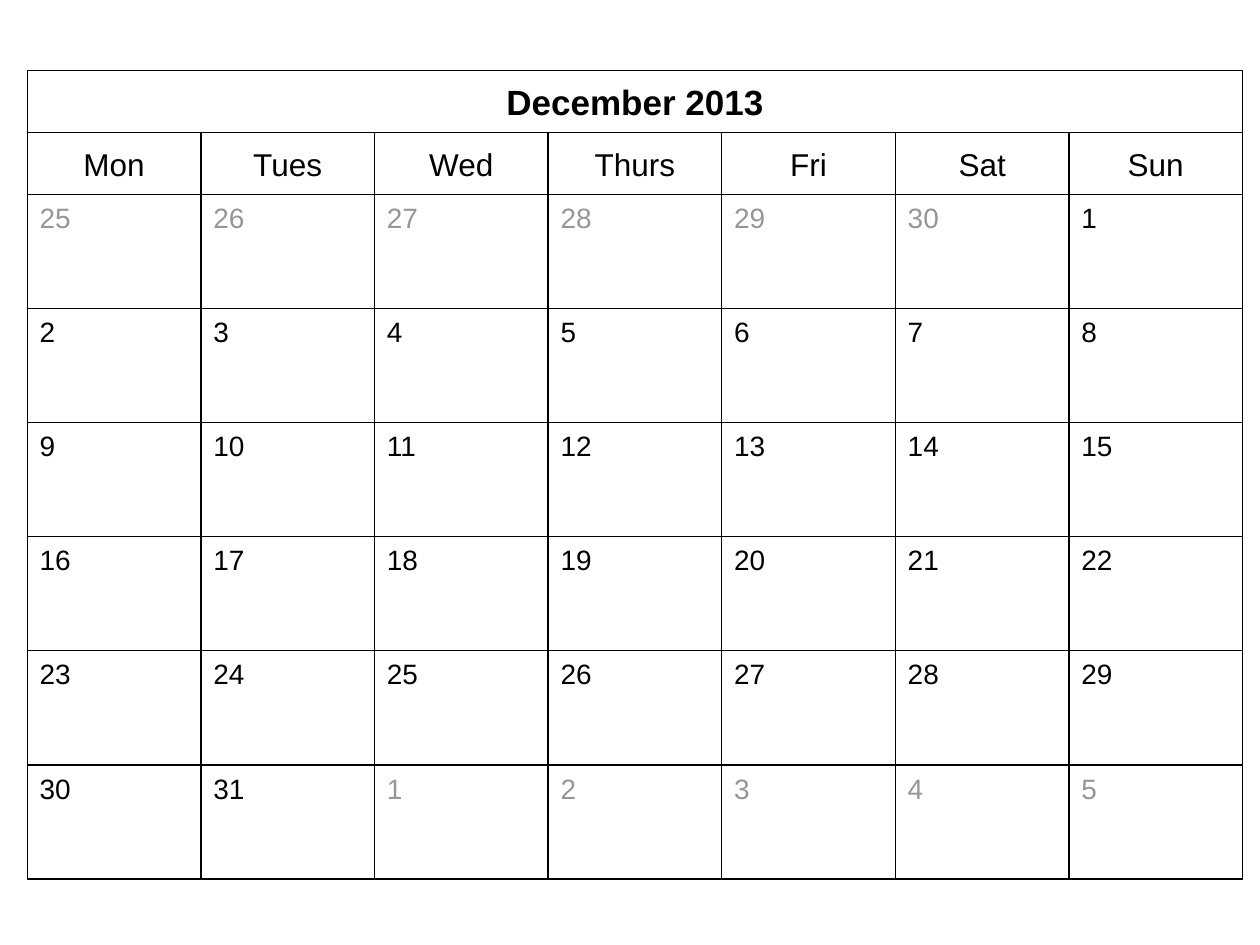
from dataclasses import dataclass
from itertools import chain

from pptx import Presentation
from pptx.dml.color import RGBColor
from pptx.enum.shapes import MSO_SHAPE
from pptx.enum.text import MSO_ANCHOR, MSO_AUTO_SIZE, PP_ALIGN
from pptx.util import Cm, Pt

RECT = MSO_SHAPE.RECTANGLE
TOP, MIDDLE = MSO_ANCHOR.TOP, MSO_ANCHOR.MIDDLE
LEFT, CENTER = PP_ALIGN.LEFT, PP_ALIGN.CENTER
FIXED = MSO_AUTO_SIZE.NONE
TITLE_ONLY = 5


@dataclass(frozen=True)
class Theme:
    """Colours, font and type sizes of the calendar."""
    ink: RGBColor = RGBColor(0, 0, 0)
    dim: RGBColor = RGBColor(0x96, 0x96, 0x96)
    paper: RGBColor = RGBColor(255, 255, 255)
    font: str = "Arial"
    month: Pt = Pt(20)
    name: Pt = Pt(18)
    date: Pt = Pt(16)
    line: Pt = Pt(0.75)


THEME = Theme()
GRID_X, GRID_Y = Cm(0.55), Cm(1.42)
COL_W, HEAD_H, DAY_H = Cm(3.5), Cm(1.25), Cm(2.3)
NAMES = ["Mon", "Tues", "Wed", "Thurs", "Fri", "Sat", "Sun"]
COLS = len(NAMES)


def outline(shape):
    """Give a box the black grid line."""
    shape.line.color.rgb = THEME.ink
    shape.line.width = THEME.line


def write(shape, text, size, color=THEME.ink, bold=False, align=CENTER):
    """Put one formatted paragraph in a box."""
    frame = shape.text_frame
    frame.text = text
    frame.word_wrap = True
    frame.auto_size = FIXED
    para = frame.paragraphs[0]
    para.alignment = align
    font = para.font
    font.name, font.size, font.bold = THEME.font, size, bold
    font.color.rgb = color


def style_head(shape):
    """Fill a heading box and centre its text vertically."""
    shape.fill.solid()
    shape.fill.fore_color.rgb = THEME.paper
    frame = shape.text_frame
    frame.vertical_anchor = MIDDLE
    frame.margin_left = frame.margin_right = Cm(0.25)
    frame.margin_top = frame.margin_bottom = Cm(0.05)


def add_box(slide, col, top, height):
    """Add an outlined box in a calendar column."""
    box = slide.shapes.add_shape(RECT, GRID_X + col * COL_W, top, COL_W, height)
    box.shadow.inherit = False
    outline(box)
    return box


def set_month(slide, text):
    """Place the month in the title across the whole grid."""
    title = slide.shapes.title
    title.left, title.top = GRID_X, GRID_Y
    title.width, title.height = COLS * COL_W, HEAD_H
    outline(title)
    style_head(title)
    write(title, text, THEME.month, bold=True)


def add_names(slide):
    """Add the row of weekday names."""
    for col, name in enumerate(NAMES):
        box = add_box(slide, col, GRID_Y + HEAD_H, HEAD_H)
        style_head(box)
        write(box, name, THEME.name)


def add_days(slide):
    """Add the dates, dimming those of the months before and after."""
    days = chain(
        ((day, THEME.dim) for day in range(25, 31)),
        ((day, THEME.ink) for day in range(1, 32)),
        ((day, THEME.dim) for day in range(1, 6)),
    )
    for index, (day, color) in enumerate(days):
        row, col = divmod(index, COLS)
        box = add_box(slide, col, GRID_Y + 2 * HEAD_H + row * DAY_H, DAY_H)
        box.fill.background()
        box.text_frame.vertical_anchor = TOP
        write(box, str(day), THEME.date, color, align=LEFT)


def main():
    """Build the calendar slide."""
    deck = Presentation()
    deck.slide_width, deck.slide_height = Cm(25.4), Cm(19.05)
    slide = deck.slides.add_slide(deck.slide_layouts[TITLE_ONLY])
    set_month(slide, "December 2013")
    add_names(slide)
    add_days(slide)
    deck.save("out.pptx")


if __name__ == "__main__":
    main()
